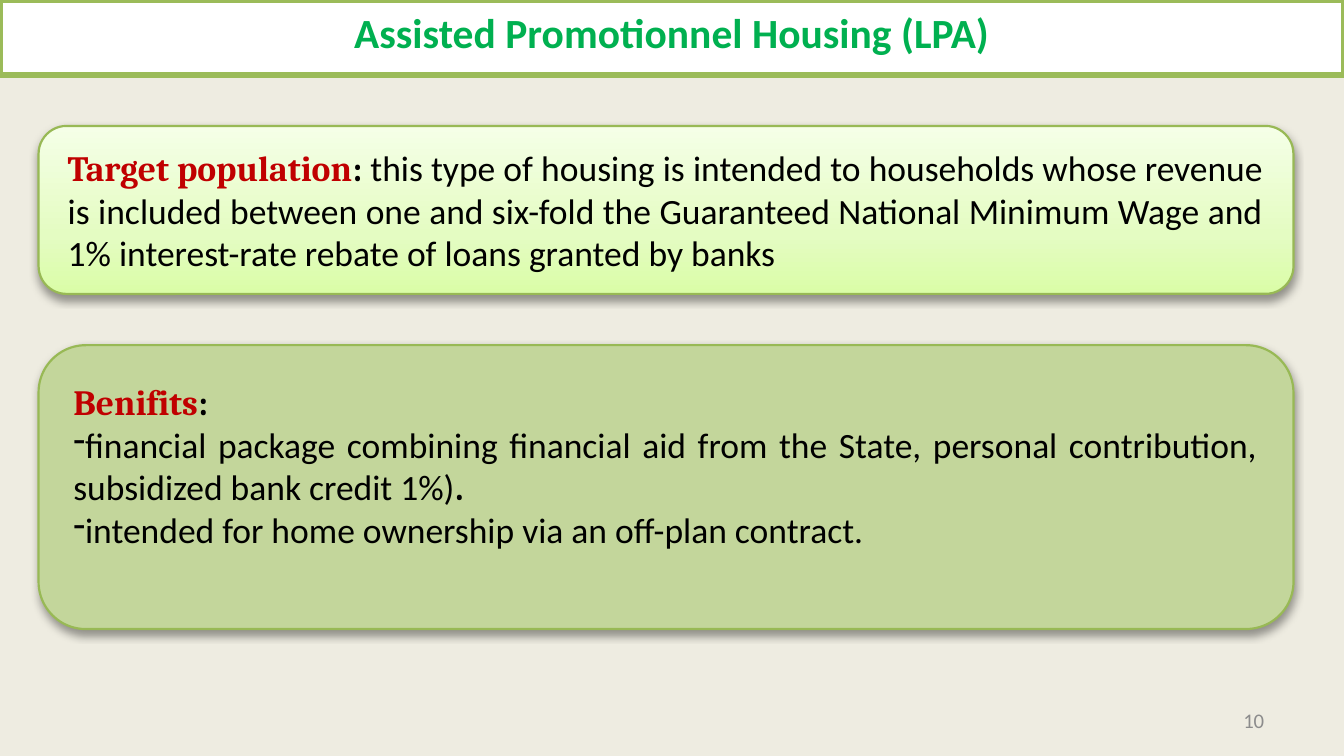
import pptx
import pptx.util
import pptx.dml.color
import pptx.enum.shapes
import pptx.enum.text
import pptx.oxml.ns
import lxml.etree

Cm = pptx.util.Cm
Pt = pptx.util.Pt
ALIGN = pptx.enum.text.PP_ALIGN
ANCHOR = pptx.enum.text.MSO_ANCHOR
qn = pptx.oxml.ns.qn

LEFT, WIDTH = 0.46, 14.94
RED, BLACK, GREEN = "C00000", "000000", "00B050"


def color(code):
    return pptx.dml.color.RGBColor.from_string(code)


def node(parent, tag, **attrs):
    return lxml.etree.SubElement(parent, qn(tag), attrs)


def place(shape, left, top, width, height):
    shape.left, shape.top = Cm(left), Cm(top)
    shape.width, shape.height = Cm(width), Cm(height)


def outline(shape, code, width):
    shape.line.color.rgb = color(code)
    shape.line.width = Pt(width)


def solid(shape, code):
    shape.fill.solid()
    shape.fill.fore_color.rgb = color(code)


def fade(shape, stops):
    """Fill from bottom to top with (percent, colour) stops."""
    shape.fill.gradient()
    shape.fill.gradient_angle = 90
    items = shape._element.spPr.find(qn("a:gradFill")).find(qn("a:gsLst"))
    for old in list(items):
        items.remove(old)
    for part, code in stops:
        stop = node(items, "a:gs", pos=str(part * 1000))
        node(stop, "a:srgbClr", val=code)


def shade(shape):
    shape.shadow.inherit = False
    effects = shape._element.spPr.find(qn("a:effectLst"))
    drop = node(effects, "a:outerShdw", blurRad=str(Pt(3.1)),
                dist=str(Pt(1.6)), dir="5400000", rotWithShape="0")
    tint = node(drop, "a:srgbClr", val="000000")
    node(tint, "a:alpha", val="38000")


def style(run, size, font, code, bold=False):
    run.font.size = Pt(size)
    run.font.name = font
    run.font.bold = bold
    run.font.color.rgb = color(code)


def pad(frame):
    frame.margin_left = frame.margin_right = Cm(0.16)
    frame.margin_top = frame.margin_bottom = Cm(0.08)


def line(frame, text, size, code, align, bold=False):
    """Write one short line with narrow margins."""
    pad(frame)
    frame.word_wrap = True
    frame.text = text
    para = frame.paragraphs[0]
    para.alignment = align
    style(para.runs[0], size, "Calibri", code, bold)


def head(slide, text):
    title = slide.shapes.title
    place(title, 0, 0, 16, 0.89)
    solid(title, "FFFFFF")
    outline(title, "9BBB59", 2)
    line(title.text_frame, text, 14, GREEN, ALIGN.CENTER, True)
    title.text_frame.auto_size = pptx.enum.text.MSO_AUTO_SIZE.NONE
    title.text_frame.vertical_anchor = ANCHOR.TOP


def panel(slide, top, height, paras):
    """Rounded box; paras holds (dash, [(text, colour, strong), ...])."""
    kind = pptx.enum.shapes.MSO_SHAPE.ROUNDED_RECTANGLE
    box = slide.shapes.add_shape(kind, Cm(LEFT), Cm(top), Cm(WIDTH), Cm(height))
    outline(box, "98B955", 0.75)
    shade(box)
    frame = box.text_frame
    frame.word_wrap = True
    frame.vertical_anchor = ANCHOR.MIDDLE
    for i, (dash, parts) in enumerate(paras):
        para = frame.add_paragraph() if i else frame.paragraphs[0]
        para.alignment = ALIGN.JUSTIFY
        if dash:
            props = para._p.get_or_add_pPr()
            node(props, "a:buFontTx")
            node(props, "a:buChar", char="-")
        for text, code, strong in parts:
            run = para.add_run()
            run.text = text
            style(run, 12, "Cambria" if strong else "Calibri", code, strong)
    return box


def main():
    deck = pptx.Presentation()
    deck.slide_width, deck.slide_height = Cm(16), Cm(9)
    slide = deck.slides.add_slide(deck.slide_layouts[5])
    solid(slide.background, "EEECE1")
    head(slide, "Assisted Promotionnel Housing (LPA)")

    # Target population
    target = panel(slide, 1.5, 2, [
        (False, [
            ("Target population", RED, True),
            (": ", BLACK, True),
            ("this type of housing is intended to households whose revenue "
             "is included between one and six-fold the Guaranteed National "
             "Minimum Wage and 1% interest-rate rebate of loans granted by "
             "banks", BLACK, False)])])
    fade(target, [(0, "DAFDA7"), (35, "E4FCC2"), (100, "F5FFE7")])

    # Benefits, with a deeper lower margin
    gains = panel(slide, 4.11, 3.38, [
        (False, [("Benifits", RED, True), (": ", BLACK, True)]),
        (True, [
            ("financial package combining financial aid from the State, "
             "personal contribution, subsidized bank credit 1%)", BLACK, False),
            (".", BLACK, True)]),
        (True, [("intended for home ownership via an off-plan contract.",
                 BLACK, False)])])
    solid(gains, "C3D69B")
    gains.text_frame.margin_bottom = Cm(0.64)

    # Page number
    page = slide.shapes.add_textbox(Cm(11.48), Cm(8.33), Cm(3.73), Cm(0.48))
    line(page.text_frame, "10", 7, "8C8C8C", ALIGN.RIGHT)
    page.text_frame.vertical_anchor = ANCHOR.MIDDLE

    deck.save("out.pptx")


if __name__ == "__main__":
    main()
